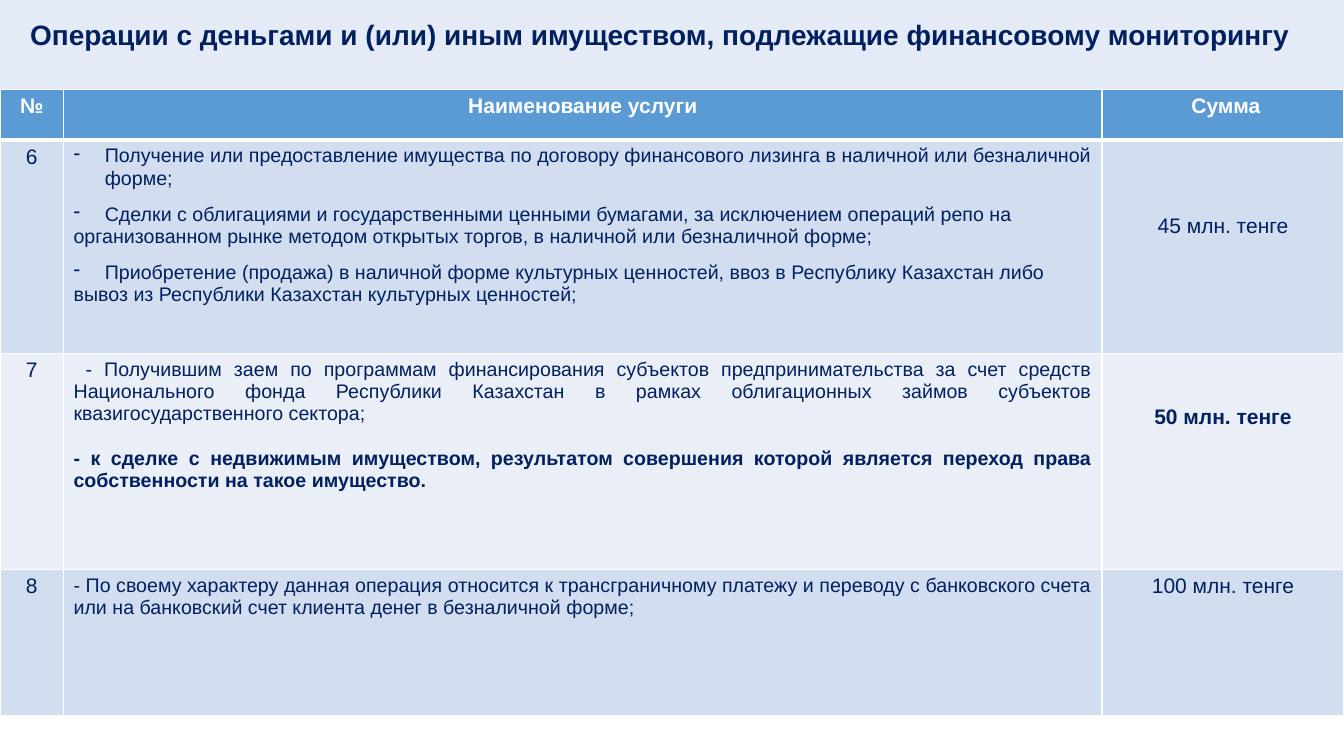
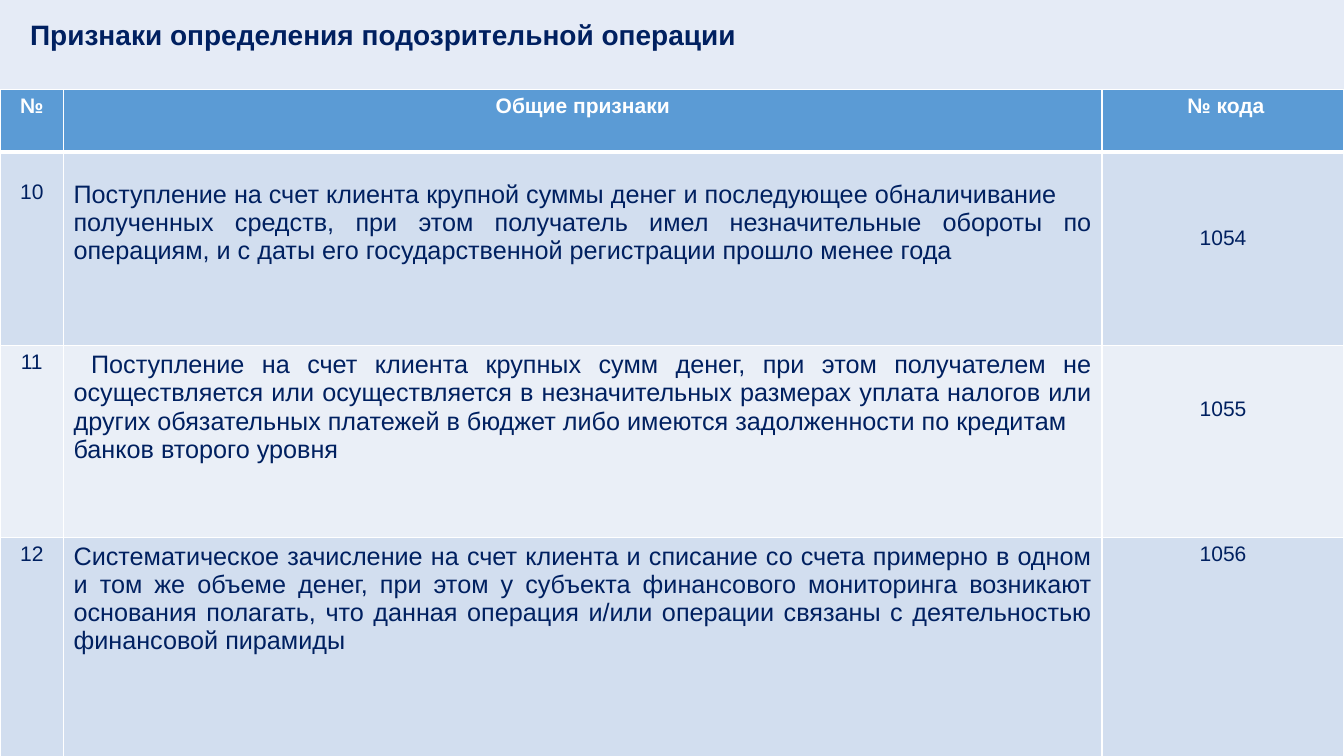
import lxml.etree
import pptx
import pptx.dml.color
import pptx.enum.shapes
import pptx.enum.text
import pptx.oxml.ns
import pptx.util

Inches, Pt = pptx.util.Inches, pptx.util.Pt
qn = pptx.oxml.ns.qn
ALIGN = pptx.enum.text.PP_ALIGN

COLORS = {
    "band": "DAE3F3",
    "text": "002060",
    "header": "5B9BD5",
    "odd": "D2DEEF",
    "even": "EAEFF7",
    "white": "FFFFFF",
}


def rgb(name):
    return pptx.dml.color.RGBColor.from_string(COLORS[name])


class Deck:
    font = "Arial"
    width, height = 13.33, 7.5
    band_height = 0.89
    columns = (0.63, 10.3, 2.4)
    cell_size = 15
    cell_top = 0.05
    line_step = 0.23  # height of one line, for lowering cell text

    def __init__(self):
        self.prs = pptx.Presentation()
        self.prs.slide_width = Inches(self.width)
        self.prs.slide_height = Inches(self.height)
        self.s = None

    def slide(self, title):
        self.s = self.prs.slides.add_slide(self.prs.slide_layouts[6])
        self.band()
        self.title(title)

    def band(self):
        sp = self.s.shapes.add_shape(
            pptx.enum.shapes.MSO_SHAPE.RECTANGLE,
            0, 0, Inches(self.width), Inches(self.band_height))
        sp.shadow.inherit = False
        sp.line.fill.background()
        sp.fill.solid()
        sp.fill.fore_color.rgb = rgb("band")
        color = sp.fill._xPr.find(".//" + qn("a:srgbClr"))
        lxml.etree.SubElement(color, qn("a:alpha"), val="70000")

    def title(self, text):
        sp = self.s.shapes.add_textbox(
            Inches(0.2), Inches(0.12), Inches(13), Inches(0.44))
        tf = sp.text_frame
        tf.word_wrap = True
        tf.auto_size = pptx.enum.text.MSO_AUTO_SIZE.SHAPE_TO_FIT_TEXT
        self.run(tf.paragraphs[0], text, 20, bold=True)

    def run(self, p, text, size, color="text", bold=False):
        r = p.add_run()
        r.text = text
        r.font.name = self.font
        r.font.size = Pt(size)
        r.font.bold = bold
        r.font.color.rgb = rgb(color)

    def dash(self, p):
        pPr = p._p.get_or_add_pPr()
        pPr.set("marL", str(Inches(0.31)))
        pPr.set("indent", str(-Inches(0.31)))
        lxml.etree.SubElement(pPr, qn("a:buChar"), char="-")

    def borders(self, cell, top=1, bottom=1):
        tcPr = cell._tc.get_or_add_tcPr()
        for tag, width in (("lnL", 1), ("lnR", 1), ("lnT", top), ("lnB", bottom)):
            ln = lxml.etree.SubElement(tcPr, qn("a:" + tag), w=str(Pt(width)))
            fill = lxml.etree.SubElement(ln, qn("a:solidFill"))
            lxml.etree.SubElement(fill, qn("a:srgbClr"), val=COLORS["white"])

    def cell(self, cell, fill, lower=0):
        cell.fill.solid()
        cell.fill.fore_color.rgb = rgb(fill)
        cell.margin_top = Inches(self.cell_top + lower * self.line_step)
        return cell.text_frame

    def label(self, cell, text, fill, lower=0, color="text", bold=False):
        p = self.cell(cell, fill, lower).paragraphs[0]
        p.alignment = ALIGN.CENTER
        self.run(p, text, self.cell_size, color, bold)

    def body(self, cell, paragraphs, size, fill, lower=0):
        tf = self.cell(cell, fill, lower)
        for i, (text, style) in enumerate(paragraphs):
            p = tf.add_paragraph() if i else tf.paragraphs[0]
            p.alignment = ALIGN.JUSTIFY
            p.space_before = Pt(style.get("before", 0))
            if style.get("dash"):
                self.dash(p)
            self.run(p, text, size, bold=style.get("bold", False))

    def table(self, headers, rows, heights, size):
        """Each row: number, its drop in lines, paragraphs, value, its drop, bold."""
        table = self.s.shapes.add_table(
            len(heights), len(self.columns), 0, Inches(self.band_height),
            Inches(self.width), Inches(sum(heights))).table
        table.horz_banding = False
        for column, width in zip(table.columns, self.columns):
            column.width = Inches(width)
        for i, height in enumerate(heights):
            table.rows[i].height = Inches(height)
            for cell in table.rows[i].cells:
                self.borders(cell, 3 if i == 1 else 1, 3 if i == 0 else 1)
        for cell, text in zip(table.rows[0].cells, headers):
            self.label(cell, text, "header", color="white", bold=True)
        for i, (number, drop, text, value, value_drop, bold) in enumerate(rows, 1):
            fill = "odd" if i % 2 else "even"
            self.label(table.cell(i, 0), number, fill, drop)
            self.body(table.cell(i, 1), text, size, fill, drop)
            self.label(table.cell(i, 2), value, fill, value_drop, bold=bold)


def main():
    deck = Deck()

    # Operations subject to monitoring
    deck.slide("Операции с деньгами и (или) иным имуществом, подлежащие финансовому мониторингу")
    item = {"dash": True, "before": 10}
    deck.table(
        ("№", "Наименование услуги", " Сумма"),
        [
            ("6", 0, [
                ("Получение или предоставление имущества по договору финансового лизинга "
                 "в наличной или безналичной форме;", {"dash": True}),
                ("Сделки с облигациями и государственными ценными бумагами, "
                 "за исключением операций репо на ", item),
                ("организованном рынке методом открытых торгов, "
                 "в наличной или безналичной форме;", {}),
                ("Приобретение (продажа) в наличной форме культурных ценностей, "
                 "ввоз в Республику Казахстан либо", item),
                ("вывоз из Республики Казахстан культурных ценностей;", {}),
            ], "45 млн. тенге", 3, False),
            ("7", 0, [
                (" - Получившим заем по программам финансирования субъектов "
                 "предпринимательства за счет средств Национального фонда Республики "
                 "Казахстан в рамках облигационных займов субъектов "
                 "квазигосударственного сектора;", {}),
                ("- к сделке с недвижимым имуществом, результатом совершения которой "
                 "является переход права собственности на такое имущество.",
                 {"bold": True, "before": 16}),
            ], "50 млн. тенге", 2, True),
            ("8", 0, [
                ("- По своему характеру данная операция относится к трансграничному "
                 "платежу и переводу с банковского счета или на банковский счет "
                 "клиента денег в безналичной форме;", {}),
            ], "100 млн. тенге", 0, False),
        ],
        heights=(0.5, 2.12, 2.14, 1.45), size=14)

    # Signs of a suspicious operation
    deck.slide("Признаки определения подозрительной операции")
    deck.table(
        ("№", "Общие признаки", " № кода"),
        [
            ("10", 1, [
                ("Поступление на счет клиента крупной суммы денег "
                 "и последующее обналичивание", {}),
                ("полученных средств, при этом получатель имел незначительные обороты "
                 "по операциям, и с даты его государственной регистрации прошло "
                 "менее года", {}),
            ], "1054", 3, False),
            ("11", 0, [
                (" Поступление на счет клиента крупных сумм денег, при этом получателем "
                 "не осуществляется или осуществляется в незначительных размерах уплата "
                 "налогов или других обязательных платежей в бюджет либо имеются "
                 "задолженности по кредитам", {}),
                ("банков второго уровня", {}),
            ], "1055", 2, False),
            ("12", 0, [
                ("Систематическое зачисление на счет клиента и списание со счета "
                 "примерно в одном и том же объеме денег, при этом у субъекта "
                 "финансового мониторинга возникают основания полагать, что данная "
                 "операция и/или операции связаны с деятельностью "
                 "финансовой пирамиды", {}),
            ], "1056", 0, False),
        ],
        heights=(0.62, 1.92, 1.9, 2.68), size=18)

    deck.prs.save("out.pptx")


if __name__ == "__main__":
    main()
